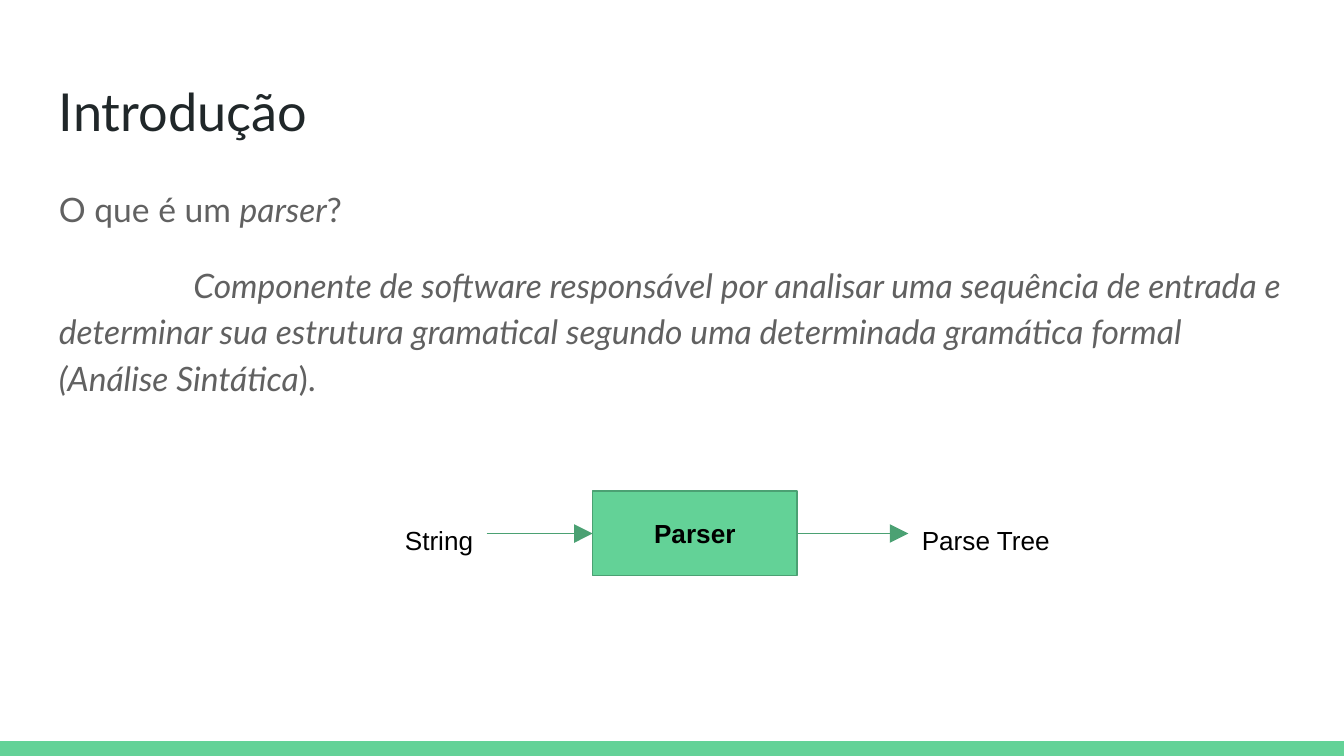
from lxml.etree import SubElement
from pptx import Presentation
from pptx.dml.color import RGBColor
from pptx.enum.shapes import MSO_CONNECTOR, MSO_SHAPE
from pptx.enum.text import MSO_ANCHOR, PP_ALIGN
from pptx.oxml.ns import qn
from pptx.util import Inches, Pt

COLORS = {"green": "63D297", "border": "4BA173", "title": "202729", "body": "616161", "label": "000000"}
WIDTH = 10
HEIGHT = WIDTH * 9 / 16
MARGIN = 0.34
CONTENT_WIDTH = WIDTH - 2 * MARGIN
BAR_HEIGHT = 0.11
FLOW_Y = 3.97
BOX_LEFT, BOX_WIDTH, BOX_HEIGHT = 4.41, 1.52, 0.63
BOX_RIGHT = BOX_LEFT + BOX_WIDTH
INPUT_X, OUTPUT_X = 3.62, 6.76
LABEL_TOP, LABEL_HEIGHT = 3.8, 0.33


def write(shape, paragraphs, font_name, size, color, align=PP_ALIGN.LEFT, anchor=MSO_ANCHOR.TOP):
    frame = shape.text_frame
    frame.word_wrap = True
    frame.vertical_anchor = anchor
    frame.margin_left = frame.margin_right = frame.margin_top = frame.margin_bottom = Inches(0.1)
    for index, runs in enumerate(paragraphs):
        paragraph = frame.add_paragraph() if index else frame.paragraphs[0]
        paragraph.alignment = align
        paragraph.font.name = font_name
        paragraph.font.size = Pt(size)
        paragraph.font.color.rgb = RGBColor.from_string(COLORS[color])
        for text, italic in runs:
            run = paragraph.add_run()
            run.text = text
            if italic:
                run.font.italic = True
    return frame.paragraphs


def add_rectangle(left, top, width, height):
    shape = slide.shapes.add_shape(
        MSO_SHAPE.RECTANGLE, Inches(left), Inches(top), Inches(width), Inches(height))
    shape.shadow.inherit = False
    shape.fill.solid()
    shape.fill.fore_color.rgb = RGBColor.from_string(COLORS["green"])
    shape.line.fill.background()
    return shape


presentation = Presentation()
presentation.slide_width = Inches(WIDTH)
presentation.slide_height = Inches(HEIGHT)
slide = presentation.slides.add_slide(presentation.slide_layouts[6])

add_rectangle(0, HEIGHT - BAR_HEIGHT, WIDTH, BAR_HEIGHT)

title = slide.shapes.add_textbox(Inches(MARGIN), Inches(0.49), Inches(CONTENT_WIDTH), Inches(0.63))
write(title, [[("Introdução", False)]], "Lato", 28, "title")

body = slide.shapes.add_textbox(Inches(MARGIN), Inches(1.26), Inches(CONTENT_WIDTH), Inches(1.84))
definition = (
    "\tComponente de software responsável por analisar uma sequência de entrada e "
    "determinar sua estrutura gramatical segundo uma determinada gramática formal "
    "(Análise Sintática"
)
body_paragraphs = write(body, [
    [("O que é um ", False), ("parser", True), ("?", False)],
    [(definition, True), (").", False)],
], "Lato", 18, "body")
for paragraph in body_paragraphs:
    paragraph.line_spacing = 1.15
    paragraph.space_after = Pt(16)
definition_properties = body_paragraphs[1]._p.get_or_add_pPr()
definition_properties.set("marL", "0")
definition_properties.set("indent", str(Inches(0.5)))

parser_box = add_rectangle(BOX_LEFT, FLOW_Y - BOX_HEIGHT / 2, BOX_WIDTH, BOX_HEIGHT)
parser_box.line.color.rgb = RGBColor.from_string(COLORS["border"])
parser_box.line.width = Pt(0.75)
parser_paragraphs = write(
    parser_box, [[("Parser", False)]], "Arial", 14, "label", PP_ALIGN.CENTER, MSO_ANCHOR.MIDDLE)
parser_paragraphs[0].font.bold = True

for start, end in [(INPUT_X, BOX_LEFT), (BOX_RIGHT, OUTPUT_X)]:
    arrow = slide.shapes.add_connector(
        MSO_CONNECTOR.ELBOW, Inches(start), Inches(FLOW_Y), Inches(end), Inches(FLOW_Y))
    arrow.line.color.rgb = RGBColor.from_string(COLORS["border"])
    arrow.line.width = Pt(0.75)
    SubElement(arrow.line._get_or_add_ln(), qn("a:tailEnd"), type="triangle", w="lg", len="lg")
    SubElement(arrow._element.spPr, qn("a:effectLst"))

for text, left, width, align in [
    ("String", INPUT_X - 1, 1, PP_ALIGN.RIGHT),
    ("Parse Tree", OUTPUT_X, 1.38, PP_ALIGN.LEFT),
]:
    label = slide.shapes.add_textbox(Inches(left), Inches(LABEL_TOP), Inches(width), Inches(LABEL_HEIGHT))
    write(label, [[(text, False)]], "Arial", 14, "label", align)

presentation.save("out.pptx")
